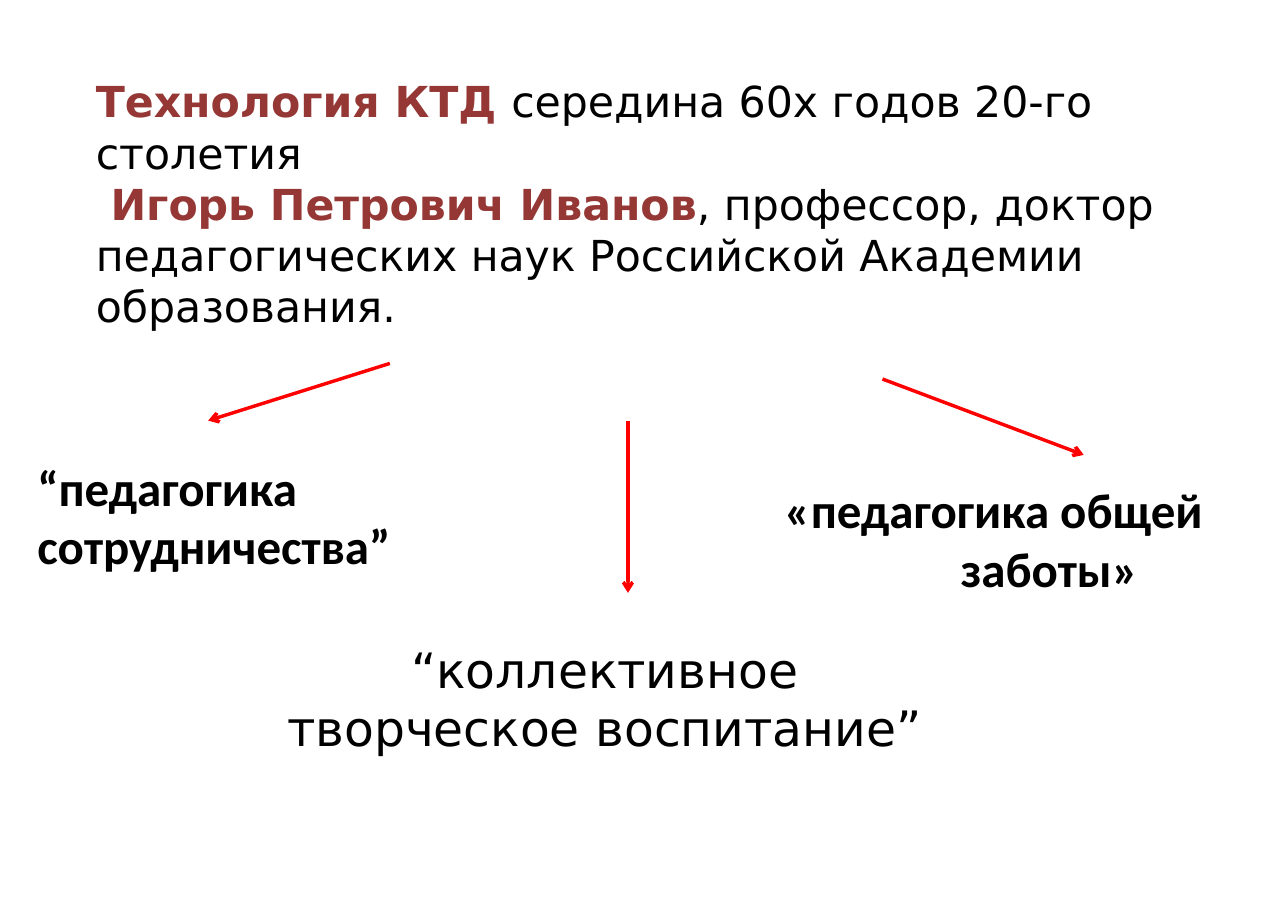
from lxml import etree
from pptx import Presentation
from pptx.dml.color import RGBColor
from pptx.enum.shapes import MSO_CONNECTOR
from pptx.enum.text import MSO_ANCHOR, MSO_AUTO_SIZE, PP_ALIGN
from pptx.oxml.ns import qn
from pptx.util import Cm, Pt

BLACK = RGBColor(0x00, 0x00, 0x00)
MAROON = RGBColor(0x95, 0x37, 0x35)
RED = RGBColor(0xFF, 0x00, 0x00)


def write(frame, paragraphs, *, font, size, margins=(0, 0, 0, 0),
          align=PP_ALIGN.LEFT, spacing=None, hanging=0):
    """Fill a text frame; each paragraph is a list of (text, bold, colour)."""
    frame.word_wrap = True
    frame.auto_size = MSO_AUTO_SIZE.NONE
    frame.vertical_anchor = MSO_ANCHOR.TOP
    (frame.margin_left, frame.margin_top,
     frame.margin_right, frame.margin_bottom) = [Cm(m) for m in margins]
    for index, runs in enumerate(paragraphs):
        paragraph = frame.add_paragraph() if index else frame.paragraphs[0]
        paragraph.alignment = align
        paragraph.space_before = Pt(0)
        if spacing:
            paragraph.line_spacing = Pt(spacing)
        if hanging:
            properties = paragraph._p.get_or_add_pPr()
            properties.set("marL", str(Cm(hanging)))
            properties.set("indent", str(-Cm(hanging)))
        for text, bold, colour in runs:
            run = paragraph.add_run()
            run.text = text
            run.font.name = font
            run.font.size = Pt(size)
            run.font.bold = bold
            run.font.color.rgb = colour


presentation = Presentation()
presentation.slide_width = Cm(29.7)
presentation.slide_height = Cm(21.03)
slide = presentation.slides.add_slide(presentation.slide_layouts[5])

title = slide.shapes.title
title.left, title.top, title.width, title.height = Cm(2.21), Cm(0.79), Cm(25.5), Cm(7.44)
write(title.text_frame, [
    [("Технология КТД ", True, MAROON),
     ("середина 60х годов 20-го столетия", False, BLACK)],
    [(" Игорь Петрович Иванов", True, MAROON),
     (", профессор, доктор педагогических наук Российской Академии образования.",
      False, BLACK)],
], font="DejaVu Sans", size=27.9, margins=(0, 0.94, 0, 0), spacing=33.5)

collective_education = slide.shapes.add_textbox(Cm(6.38), Cm(14.76), Cm(15.14), Cm(3.53))
write(collective_education.text_frame,
      [[("“коллективное творческое воспитание”", False, BLACK)]],
      font="DejaVu Sans", size=31.9, align=PP_ALIGN.CENTER, spacing=38)

# Side ideas: text, left, top, width, hanging indent
for text, left, top, width, hanging in (
    ("“педагогика сотрудничества”", 0.58, 10.39, 12.62, 0),
    ("«педагогика общей заботы»", 17.81, 10.92, 12.07, 4.06),
):
    idea = slide.shapes.add_textbox(Cm(left), Cm(top), Cm(width), Cm(3.02))
    write(idea.text_frame, [[(text, True, BLACK)]], font="Calibri", size=32,
          margins=(0.28, 0.15, 0.28, 0.15), hanging=hanging)

# Arrows from the title to each idea
for ends in (
    (8.99, 8.38, 4.8, 9.7),
    (14.48, 9.7, 14.48, 13.67),
    (20.35, 8.74, 24.99, 10.49),
):
    arrow = slide.shapes.add_connector(MSO_CONNECTOR.STRAIGHT, *[Cm(end) for end in ends])
    arrow.line.color.rgb = RED
    arrow.line.width = Pt(2.25)
    etree.SubElement(arrow.line._get_or_add_ln(), qn("a:tailEnd"), type="arrow")
    etree.SubElement(arrow._element.spPr, qn("a:effectLst"))

presentation.save("out.pptx")
